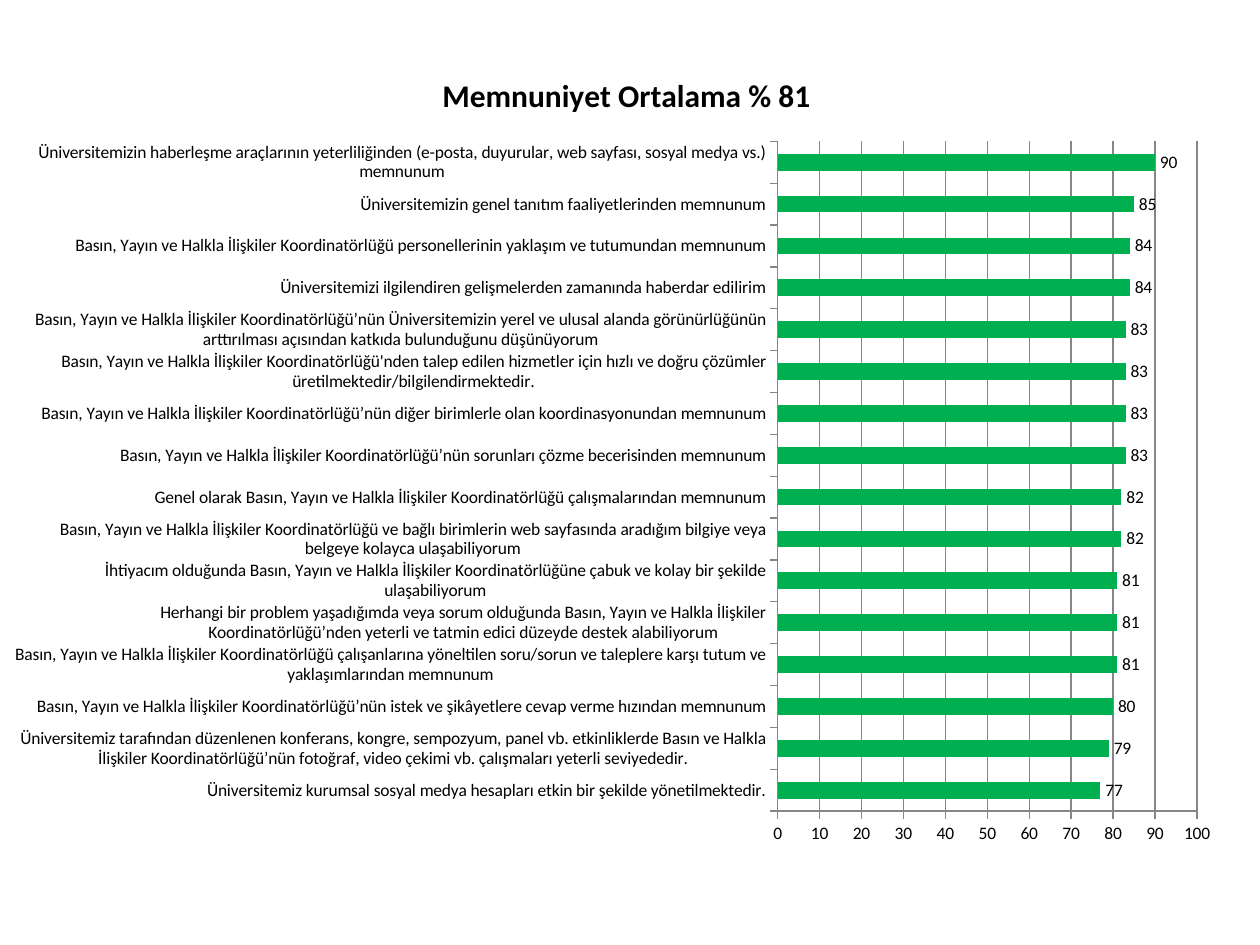
from pptx import Presentation
from pptx.chart.data import CategoryChartData
from pptx.dml.color import RGBColor
from pptx.enum.chart import XL_CHART_TYPE as ChartType
from pptx.enum.chart import XL_LABEL_POSITION as LabelPosition
from pptx.enum.chart import XL_TICK_MARK as TickMark
from pptx.oxml import parse_xml
from pptx.oxml.ns import nsdecls, qn
from pptx.util import Inches, Pt

BLACK = RGBColor(0x00, 0x00, 0x00)
GREEN = RGBColor(0x00, 0xB0, 0x50)
GRAY = RGBColor(0x86, 0x86, 0x86)
FONT = "Calibri"
TITLE = "Memnuniyet Ortalama % 81"
OFFICE = "Basın, Yayın ve Halkla İlişkiler Koordinatörlüğü"

# Survey statements and their scores, from the bottom bar to the top bar
SCORES = [
    ("Üniversitemiz kurumsal sosyal medya hesapları etkin bir şekilde yönetilmektedir.", 77),
    ("Üniversitemiz tarafından düzenlenen konferans, kongre, sempozyum, panel vb. "
     "etkinliklerde Basın ve Halkla İlişkiler Koordinatörlüğü’nün fotoğraf, video çekimi vb. "
     "çalışmaları yeterli seviyededir.", 79),
    (f"{OFFICE}’nün istek ve şikâyetlere cevap verme hızından memnunum", 80),
    (f"{OFFICE} çalışanlarına yöneltilen soru/sorun ve taleplere karşı tutum ve "
     "yaklaşımlarından memnunum", 81),
    (f"Herhangi bir problem yaşadığımda veya sorum olduğunda {OFFICE}’nden yeterli ve "
     "tatmin edici düzeyde destek alabiliyorum", 81),
    (f"İhtiyacım olduğunda {OFFICE}ne çabuk ve kolay bir şekilde ulaşabiliyorum", 81),
    (f"{OFFICE} ve bağlı birimlerin web sayfasında aradığım bilgiye veya belgeye "
     "kolayca ulaşabiliyorum", 82),
    (f"Genel olarak {OFFICE} çalışmalarından memnunum", 82),
    (f"{OFFICE}’nün sorunları çözme becerisinden memnunum", 83),
    (f"{OFFICE}’nün diğer birimlerle olan koordinasyonundan memnunum", 83),
    (f"{OFFICE}'nden talep edilen hizmetler için hızlı ve doğru çözümler "
     "üretilmektedir/bilgilendirmektedir.", 83),
    (f"{OFFICE}’nün Üniversitemizin yerel ve ulusal alanda görünürlüğünün arttırılması "
     "açısından katkıda bulunduğunu düşünüyorum", 83),
    ("Üniversitemizi ilgilendiren gelişmelerden zamanında haberdar edilirim", 84),
    (f"{OFFICE} personellerinin yaklaşım ve tutumundan memnunum", 84),
    ("Üniversitemizin genel tanıtım faaliyetlerinden memnunum", 85),
    ("Üniversitemizin haberleşme araçlarının yeterliliğinden (e-posta, duyurular, "
     "web sayfası, sosyal medya vs.) memnunum", 90),
]


def style_font(font, size=10, bold=False, color=BLACK):
    font.name = FONT
    font.size = Pt(size)
    font.bold = bold
    font.color.rgb = color


def write_text(text_frame, text, **font_format):
    run = text_frame.paragraphs[0].add_run()
    run.text = text
    style_font(run.font, **font_format)


def manual_layout(target="", **fractions):
    """Return a layout element; fractions are x, y and optionally w, h of the chart."""
    inner = f'<c:layoutTarget val="{target}"/>' if target else ""
    modes = "".join(f'<c:{key}Mode val="edge"/>' for key in "xy")
    sizes = "".join(f'<c:{key} val="{value}"/>' for key, value in fractions.items())
    return parse_xml(f'<c:layout {nsdecls("c")}><c:manualLayout>{inner}{modes}{sizes}'
                     '</c:manualLayout></c:layout>')


def add_bar_chart(slide):
    data = CategoryChartData(number_format="0")
    data.categories = [statement for statement, _ in SCORES]
    data.add_series(TITLE, [score for _, score in SCORES])
    chart = slide.shapes.add_chart(
        ChartType.BAR_CLUSTERED, Inches(0.12), Inches(0.36), Inches(9.69), Inches(6.46), data
    ).chart
    style_font(chart.font)
    chart.has_legend = False
    return chart


def style_title(chart):
    chart.has_title = True
    title = chart.chart_title
    write_text(title.text_frame, TITLE, size=18, bold=True)
    title.include_in_layout = False
    title._element.find(qn("c:tx")).addnext(manual_layout(x=0.35, y=0.04))


def style_bars(chart):
    plot = chart.plots[0]
    plot.gap_width = 150
    plot.vary_by_categories = False
    fill = plot.series[0].format.fill
    fill.solid()
    fill.fore_color.rgb = GREEN
    plot.has_data_labels = True
    labels = plot.data_labels
    labels.show_value = True
    labels.number_format = "0"
    labels.number_format_is_linked = False
    labels.position = LabelPosition.OUTSIDE_END
    style_font(labels.font)


def style_axes(chart):
    for axis in (chart.category_axis, chart.value_axis):
        axis.major_tick_mark = TickMark.OUTSIDE
        axis.minor_tick_mark = TickMark.NONE
        axis.format.line.color.rgb = GRAY
        style_font(axis.tick_labels.font)
    value_axis = chart.value_axis
    value_axis.minimum_scale, value_axis.maximum_scale = 0, 100
    value_axis.major_unit = 10
    value_axis.has_major_gridlines = True
    value_axis.major_gridlines.format.line.color.rgb = GRAY
    value_axis.tick_labels.number_format = "0"
    value_axis.tick_labels.number_format_is_linked = False


def place_plot(chart):
    plot_area = chart._chartSpace.chart.plotArea
    for layout in plot_area.findall(qn("c:layout")):
        plot_area.remove(layout)
    plot_area.insert(0, manual_layout("inner", x=0.624, y=0.118, w=0.344, h=0.823))


def main():
    presentation = Presentation()
    presentation.slide_width, presentation.slide_height = Inches(10), Inches(7.5)
    slide = presentation.slides.add_slide(presentation.slide_layouts[6])

    # Satisfaction chart
    chart = add_bar_chart(slide)
    style_title(chart)
    style_bars(chart)
    style_axes(chart)
    place_plot(chart)

    presentation.save("out.pptx")


if __name__ == "__main__":
    main()
